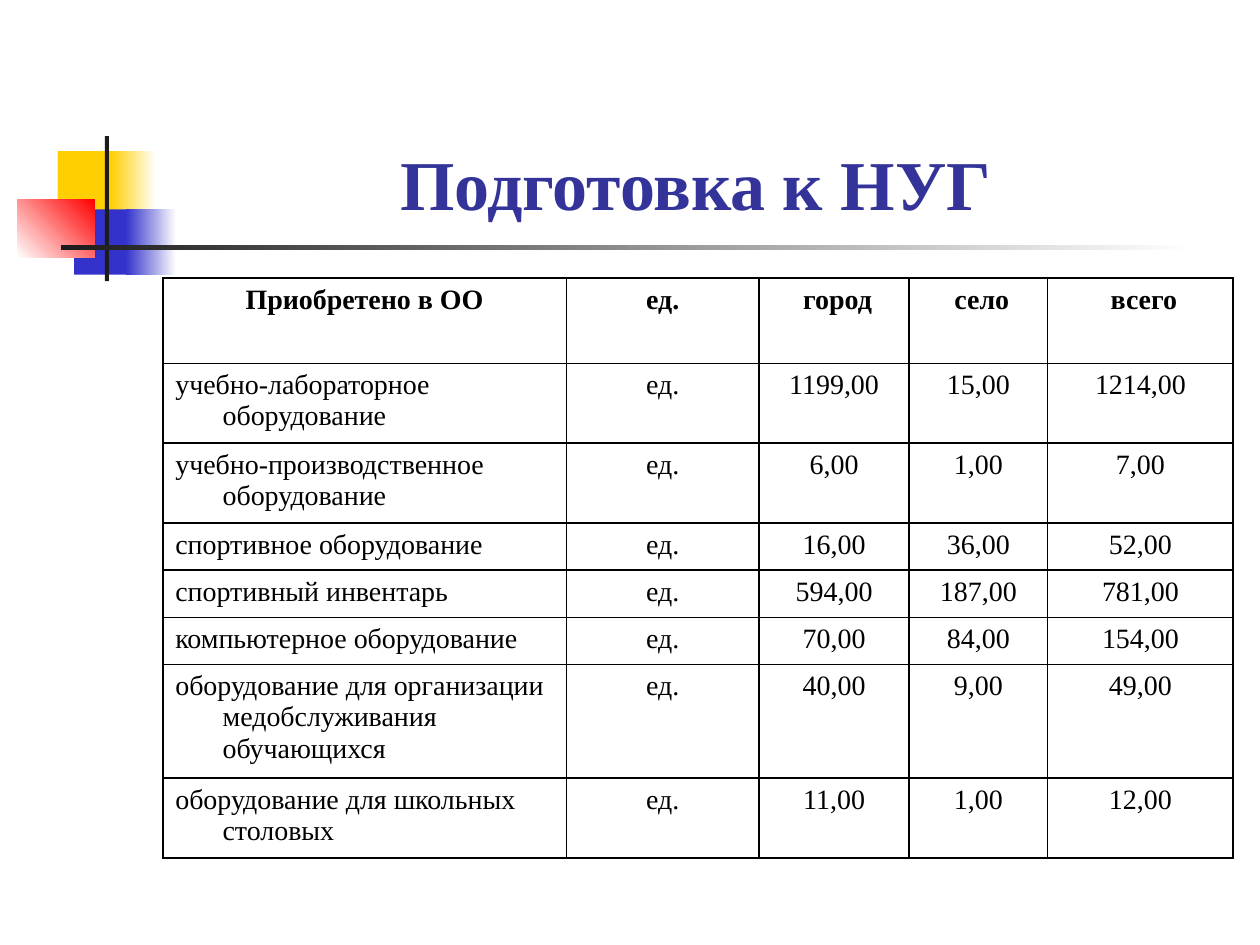
from lxml.etree import SubElement
from pptx import Presentation
from pptx.dml.color import RGBColor
from pptx.enum.shapes import MSO_SHAPE as Shape
from pptx.enum.text import MSO_ANCHOR as Anchor, PP_ALIGN as Align
from pptx.oxml.ns import qn
from pptx.util import Pt

FONT = "Times New Roman"
YELLOW, BLUE, RED, DARK, WHITE = "FFCF01", "3333CC", "FF0000", "1C1C1C", "FFFFFF"
UNIT = "ед."
HEADINGS = ["Приобретено в ОО", UNIT, " город", " село", " всего"]
PURCHASES = [
    ("учебно-лабораторное оборудование", 1199, 15),
    ("учебно-производственное оборудование", 6, 1),
    ("спортивное оборудование", 16, 36),
    ("спортивный инвентарь", 594, 187),
    ("компьютерное оборудование", 70, 84),
    ("оборудование для организации медобслуживания обучающихся", 40, 9),
    ("оборудование для школьных столовых", 11, 1),
]
COLUMN_WIDTHS = [230.6, 110.2, 85.7, 79.2, 106]
ROW_HEIGHTS = [48.6, 42.8, 44.8, 27, 27, 27, 62.8, 42.8]


def color(value):
    return RGBColor.from_string(value)


def style(paragraph, size, value, bold, align):
    paragraph.alignment = align
    paragraph.font.name = FONT
    paragraph.font.size = Pt(size)
    paragraph.font.bold = bold
    paragraph.font.color.rgb = color(value)


def add_block(slide, box, start, end=None, angle=0):
    block = slide.shapes.add_shape(Shape.RECTANGLE, *map(Pt, box))
    block.shadow.inherit = False
    block.line.fill.background()
    if end is None:
        block.fill.solid()
        block.fill.fore_color.rgb = color(start)
        return
    block.fill.gradient()
    block.fill.gradient_angle = angle
    for stop, value in zip(block.fill.gradient_stops, (start, end)):
        stop.color.rgb = color(value)


def add_ornament(slide, left, top):
    blocks = [
        ((23, 8.6, 34.6, 37.4), YELLOW),
        ((53.3, 8.6, 25.9, 37.4), YELLOW, WHITE),
        ((32.4, 41.8, 33.1, 37.4), BLUE),
        ((62, 41.8, 28.8, 37.4), BLUE, WHITE),
        ((0, 36, 44, 33.5), WHITE, RED, 45),
        ((49.9, 0, 2.4, 82.8), DARK),
        ((24.7, 62.4, 648, 2.5), DARK, WHITE),
    ]
    for (x, y, width, height), *fill in blocks:
        add_block(slide, (left + x, top + y, width, height), *fill)


def add_title(slide, box):
    frame = slide.shapes.add_textbox(*map(Pt, box)).text_frame
    frame.word_wrap = True
    frame.vertical_anchor = Anchor.BOTTOM
    title = frame.paragraphs[0]
    title.text = "Подготовка к НУГ"
    style(title, 40, "333399", True, Align.CENTER)


def add_borders(cell):
    properties = cell._tc.get_or_add_tcPr()
    for side in ("lnL", "lnR", "lnT", "lnB"):
        border = SubElement(properties, qn(f"a:{side}"), w=str(Pt(1)))
        fill = SubElement(border, qn("a:solidFill"))
        SubElement(fill, qn("a:srgbClr"), val="000000")


def fill_cell(cell, text, bold, align):
    add_borders(cell)
    cell.fill.background()
    entry = cell.text_frame.paragraphs[0]
    entry.text = text
    style(entry, 16, "000000", bold, align)
    indents = entry._p.get_or_add_pPr()
    indents.set("marL", str(Pt(27)))
    indents.set("indent", str(Pt(-27)))


def amount(value):
    return f"{value:.2f}".replace(".", ",")


def add_purchases(slide, left, top):
    rows = [HEADINGS] + [
        [item, UNIT, amount(city), amount(village), amount(city + village)]
        for item, city, village in PURCHASES
    ]
    table = slide.shapes.add_table(
        len(rows), len(HEADINGS), Pt(left), Pt(top),
        Pt(sum(COLUMN_WIDTHS)), Pt(sum(ROW_HEIGHTS))).table
    table.first_row = table.horz_banding = False
    for column, width in zip(table.columns, COLUMN_WIDTHS):
        column.width = Pt(width)
    for row, height in zip(table.rows, ROW_HEIGHTS):
        row.height = Pt(height)
    for r, row in enumerate(rows):
        for c, text in enumerate(row):
            align = Align.LEFT if r and c == 0 else Align.CENTER
            fill_cell(table.cell(r, c), text, r == 0, align)


def main():
    deck = Presentation()
    deck.slide_width, deck.slide_height = Pt(720), Pt(540)
    slide = deck.slides.add_slide(deck.slide_layouts[6])
    add_ornament(slide, 10, 77.8)
    add_title(slide, (90.7, 16.6, 613.4, 115.2))
    add_purchases(slide, 93, 159)
    deck.save("out.pptx")


if __name__ == "__main__":
    main()
